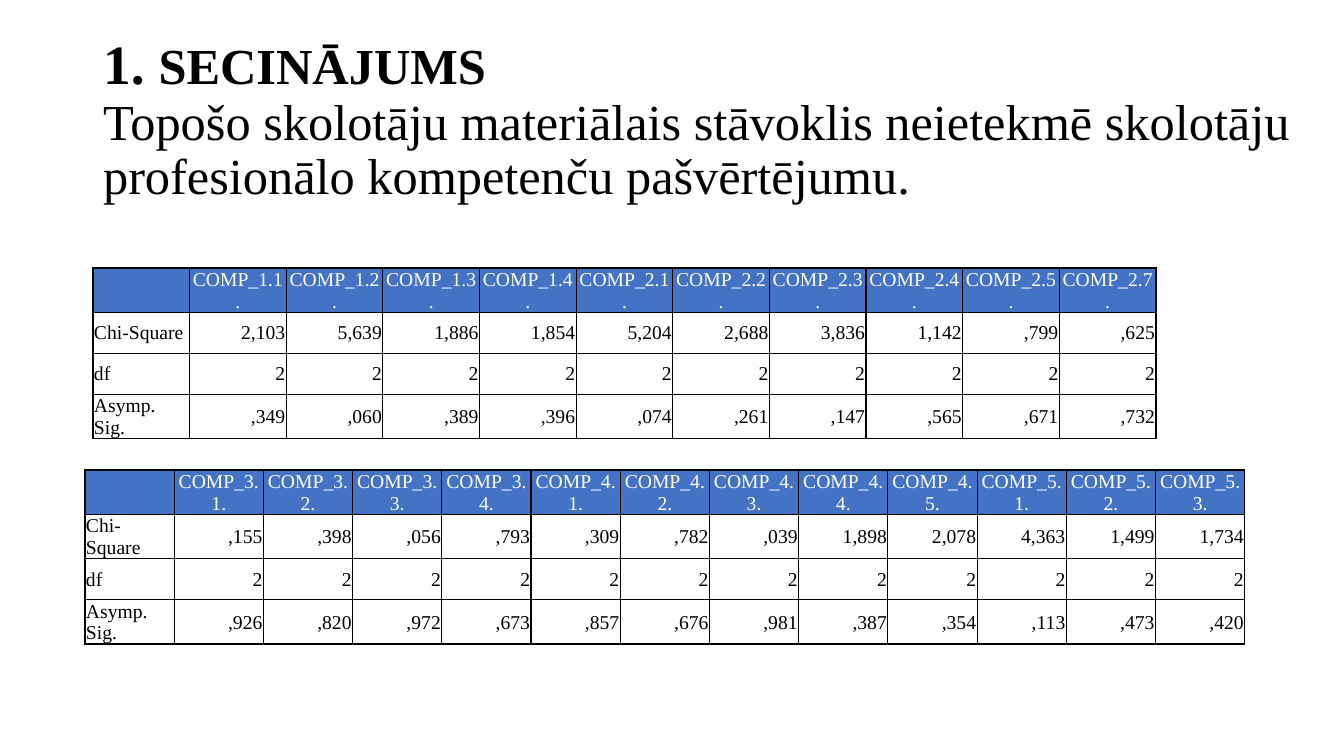
from lxml import etree
from pptx import Presentation
from pptx import util as u
from pptx.dml.color import RGBColor
from pptx.enum import text as t
from pptx.oxml import parse_xml
from pptx.oxml.ns import nsdecls, qn

PX = 914400 / 100.8
FONT = "Times New Roman"
BLACK = RGBColor(0, 0, 0)
WHITE = RGBColor(255, 255, 255)
BLUE = RGBColor(0x44, 0x72, 0xC4)
ROW = 41
STATS = ("Chi-Square", "df", "Asymp. Sig.")

# Columns: name, chi-square, significance
FIRST = [
    ("1.1", "2,103", ",349"), ("1.2", "5,639", ",060"),
    ("1.3", "1,886", ",389"), ("1.4", "1,854", ",396"),
    ("2.1", "5,204", ",074"), ("2.2", "2,688", ",261"),
    ("2.3", "3,836", ",147"), ("2.4", "1,142", ",565"),
    ("2.5", ",799", ",671"), ("2.7", ",625", ",732"),
]
SECOND = [
    ("3.1", ",155", ",926"), ("3.2", ",398", ",820"),
    ("3.3", ",056", ",972"), ("3.4", ",793", ",673"),
    ("4.1", ",309", ",857"), ("4.2", ",782", ",676"),
    ("4.3", ",039", ",981"), ("4.4", "1,898", ",387"),
    ("4.5", "2,078", ",354"), ("5.1", "4,363", ",113"),
    ("5.2", "1,499", ",473"), ("5.3", "1,734", ",420"),
]


def px(n):
    return u.Emu(round(n * PX))


def put(par, text, size=14, color=BLACK, bold=False, align=t.PP_ALIGN.LEFT):
    par.alignment = align
    run = par.add_run()
    run.text = text
    font = run.font
    font.name, font.size, font.bold = FONT, u.Pt(size), bold
    font.color.rgb = color


def edge(cell):
    props = cell._tc.get_or_add_tcPr()
    for side in ("lnL", "lnR", "lnT", "lnB"):
        props.append(parse_xml(
            f'<a:{side} {nsdecls("a")} w="12700"><a:solidFill>'
            f'<a:srgbClr val="{BLACK}"/></a:solidFill></a:{side}>'))


def head(slide, x, y, w, h):
    title = slide.shapes.title
    title.left, title.top, title.width, title.height = map(px, (x, y, w, h))
    frame = title.text_frame
    frame.word_wrap = True
    frame.auto_size = t.MSO_AUTO_SIZE.NONE
    frame.vertical_anchor = t.MSO_ANCHOR.MIDDLE
    par = frame.paragraphs[0]
    par.line_spacing = 0.9
    put(par, "1. ", size=39.6, bold=True)
    put(par, "SECINĀJUMS", size=36, bold=True)
    par.add_line_break()
    # The break takes the size of the text around it
    etree.SubElement(par._p[-1], qn("a:rPr"), sz="3600")
    put(par, "Topošo skolotāju materiālais stāvoklis neietekmē skolotāju "
        "profesionālo kompetenču pašvērtējumu.", size=36)


def grid(slide, data, x, y, w):
    names, chi, sig = zip(*data)
    rows = [("", *(f"COMP_{name}." for name in names))]
    rows += [(stat, *vals) for stat, vals in
             zip(STATS, (chi, ["2"] * len(data), sig))]
    cols = len(data) + 1
    table = slide.shapes.add_table(
        len(rows), cols, px(x), px(y), px(w), px(ROW * len(rows))).table
    table.first_row = table.horz_banding = False
    for col in table.columns:
        col.width = px(w / cols)
    for r, row in enumerate(rows):
        table.rows[r].height = px(ROW)
        for c, text in enumerate(row):
            cell = table.cell(r, c)
            cell.margin_left = cell.margin_right = cell.margin_top = px(1)
            cell.margin_bottom = 0
            cell.vertical_anchor = t.MSO_ANCHOR.MIDDLE
            edge(cell)
            if r == 0:
                cell.fill.solid()
                cell.fill.fore_color.rgb = BLUE
                color, align = WHITE, t.PP_ALIGN.CENTER
            else:
                cell.fill.background()
                color = BLACK
                align = t.PP_ALIGN.RIGHT if c else t.PP_ALIGN.LEFT
            if text:
                put(cell.text_frame.paragraphs[0], text,
                    color=color, align=align)


def main():
    deck = Presentation()
    deck.slide_width, deck.slide_height = px(1344), px(756)
    slide = deck.slides.add_slide(deck.slide_layouts[5])
    head(slide, 93, 29, 1237, 184)
    grid(slide, FIRST, 93, 268, 1063)
    grid(slide, SECOND, 85, 470, 1160)
    deck.save("out.pptx")


if __name__ == "__main__":
    main()
